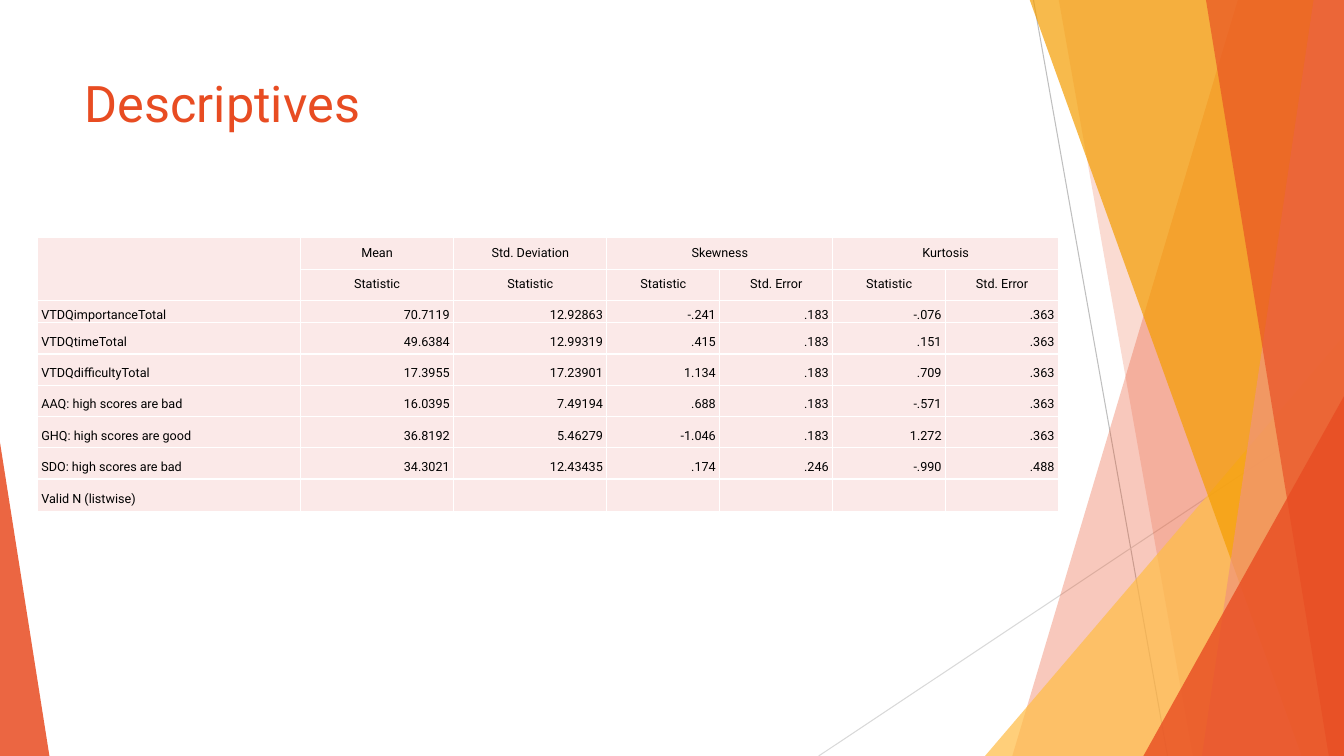
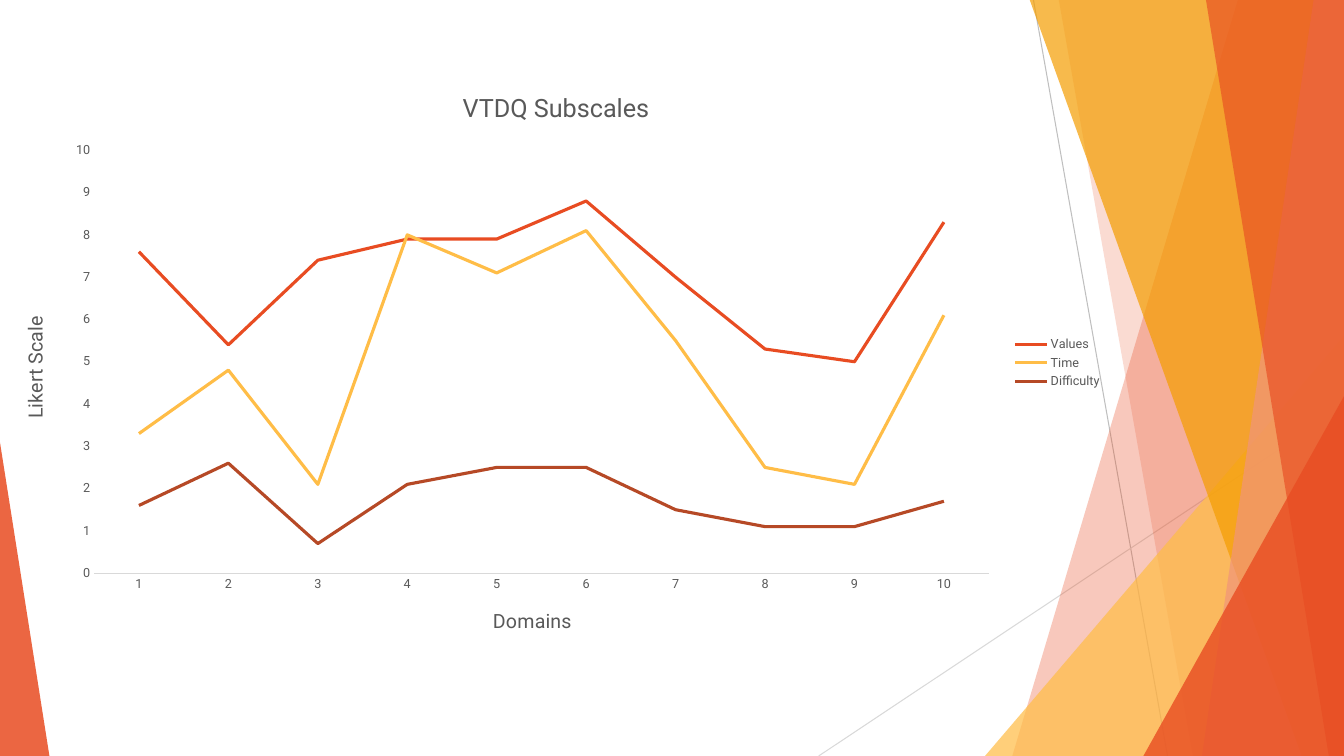
from dataclasses import dataclass

from pptx import Presentation
from pptx.chart.data import CategoryChartData
from pptx.dml.color import RGBColor
from pptx.enum.chart import XL_CHART_TYPE, XL_LEGEND_POSITION, XL_TICK_MARK
from pptx.enum.shapes import MSO_CONNECTOR, MSO_SHAPE
from pptx.enum.text import MSO_ANCHOR, MSO_AUTO_SIZE, PP_ALIGN
from pptx.oxml.ns import qn
from pptx.oxml.xmlchemy import OxmlElement
from pptx.util import Inches, Pt

LEFT, CENTER, RIGHT = PP_ALIGN.LEFT, PP_ALIGN.CENTER, PP_ALIGN.RIGHT
TOP, MIDDLE = MSO_ANCHOR.TOP, MSO_ANCHOR.MIDDLE
NO_AUTOFIT = MSO_AUTO_SIZE.NONE
STRAIGHT, TRIANGLE = MSO_CONNECTOR.STRAIGHT, MSO_SHAPE.ISOSCELES_TRIANGLE
LINE, LEGEND_RIGHT, NO_TICK = XL_CHART_TYPE.LINE, XL_LEGEND_POSITION.RIGHT, XL_TICK_MARK.NONE
TITLE_ONLY, BLANK = 5, 6


@dataclass(frozen=True)
class Theme:
    """Colours, font and type sizes of the deck."""
    font: str = "Roboto"
    red: str = "E84C22"
    amber: str = "FFBD47"
    orange: str = "F49D00"
    salmon: str = "F1947A"
    rust: str = "B64926"
    blush: str = "FBE9E8"
    white: str = "FFFFFF"
    black: str = "000000"
    grey: str = "595959"
    mid_line: str = "BFBFBF"
    light_line: str = "D9D9D9"
    title: int = 36
    chart_title: int = 18
    axis_title: int = 14
    base: int = 10
    small: int = 9
    leading: int = 16


T = Theme()
SLIDE_W, SLIDE_H = 13.33, 7.5
SLIDE_BOX = (0, 0, SLIDE_W, SLIDE_H)

RAYS = [((10.25, 0), (11.58, 7.5), T.mid_line), ((13.33, 4.03), (8.12, 7.5), T.light_line)]
FACETS = [
    ("band", 12.28, 10.04, T.red, 30),
    ("band", 10.5, 11.83, T.red, 20),
    ("triangle", (9.77, 3.33, 3.56), 1, T.amber, 72),
    ("band", 10.21, 12.91, T.orange, 70),
    ("band", 13.03, 11.92, T.salmon, 70),
    ("band", 11.96, 13.18, T.red, 65),
    ("triangle", (11.34, 3.93, 1.99), 1, T.red, 80),
    ("triangle", (0, 4.39, 0.49), 0, T.red, 85),
]

COL_WIDTHS = [2.61, 1.52, 1.52] + [1.12] * 4
ROW_HEIGHTS = [0.31, 0.31, 0.21] + [0.31] * 5 + [0.32]
HEADER_ROWS = 2
MERGES = [((0, 0), (1, 0)), ((0, 3), (0, 4)), ((0, 5), (0, 6))]
STATISTICS = [
    ["", "Mean", "Std. Deviation", "Skewness", "", "Kurtosis", ""],
    ["", "Statistic", "Statistic", "Statistic", "Std. Error", "Statistic", "Std. Error"],
    ["VTDQimportanceTotal", "70.7119", "12.92863", "-.241", ".183", "-.076", ".363"],
    ["VTDQtimeTotal", "49.6384", "12.99319", ".415", ".183", ".151", ".363"],
    ["VTDQdifficultyTotal", "17.3955", "17.23901", "1.134", ".183", ".709", ".363"],
    ["AAQ: high scores are bad", "16.0395", "7.49194", ".688", ".183", "-.571", ".363"],
    ["GHQ: high scores are good", "36.8192", "5.46279", "-1.046", ".183", "1.272", ".363"],
    ["SDO: high scores are bad", "34.3021", "12.43435", ".174", ".246", "-.990", ".488"],
    ["Valid N (listwise)", "", "", "", "", "", ""],
]

SERIES = [
    ("Values", T.red, [7.6, 5.4, 7.4, 7.9, 7.9, 8.8, 7, 5.3, 5, 8.3]),
    ("Time", T.amber, [3.3, 4.8, 2.1, 8, 7.1, 8.1, 5.5, 2.5, 2.1, 6.1]),
    ("Difficulty", T.rust, [1.6, 2.6, 0.7, 2.1, 2.5, 2.5, 1.5, 1.1, 1.1, 1.7]),
]


def rgb(color):
    """Return the RGBColor of a hex string."""
    return RGBColor.from_string(color)


def style_font(font, size, color):
    """Set the deck font with a size and colour."""
    font.name, font.size, font.bold = T.font, Pt(size), False
    font.color.rgb = rgb(color)


def write(tf, text, size=T.base, color=T.black, align=None, leading=None, indent=None):
    """Write one formatted paragraph into a text frame."""
    p = tf.paragraphs[0]
    if align is not None:
        p.alignment = align
    if leading:
        p.line_spacing = Pt(leading)
    if indent:
        for side in ("marL", "marR"):
            p._p.get_or_add_pPr().set(side, str(Inches(indent)))
    if text:
        r = p.add_run()
        r.text = text
        style_font(r.font, size, color)


def style_line(line, color, width=0.75):
    """Set the colour and width of a line."""
    line.color.rgb = rgb(color)
    line.width = Pt(width)


def add_ray(shapes, start, end, color):
    """Draw a thin line without a shadow."""
    c = shapes.add_connector(STRAIGHT, *(Inches(v) for v in (*start, *end)))
    style_line(c.line, color)
    c._element.spPr.append(OxmlElement("a:effectLst"))


def add_facet(shapes, box, kind, where, lean, color, opacity):
    """Draw a translucent band to the right edge, or a triangle on the bottom edge."""
    x, y, w, h = box
    right, bottom = Inches(x + w), Inches(y + h)
    if kind == "band":
        top = Inches(y - 0.01)
        builder = shapes.build_freeform(Inches(x + where), top)
        builder.add_line_segments([(right, top), (right, bottom), (Inches(x + lean), bottom)])
        sp = builder.convert_to_shape()
    else:
        left, top, width = where
        sp = shapes.add_shape(TRIANGLE, Inches(x + left), Inches(y + top),
                              Inches(width), Inches(h - top))
        sp.adjustments[0] = lean
    sp.shadow.inherit = False
    sp.line.fill.background()
    sp.fill.solid()
    sp.fill.fore_color.rgb = rgb(color)
    alpha = OxmlElement("a:alpha")
    alpha.set("val", str(opacity * 1000))
    sp._element.spPr.find(qn("a:solidFill"))[0].append(alpha)


def add_backdrop(prs, s, box):
    """Draw the facets as a group and place it on the master behind everything."""
    group = s.shapes.add_group_shape()
    for ray in RAYS:
        add_ray(group.shapes, *ray)
    for facet in FACETS:
        add_facet(group.shapes, box, *facet)
    for number, props in enumerate(group._element.iter(qn("p:cNvPr")), 100):
        props.set("id", str(number))
    prs.slide_master.shapes._spTree.insert(2, group._element)


def add_title(s, text, box):
    """Place and format the slide title."""
    title = s.shapes.title
    title.left, title.top, title.width, title.height = (Inches(v) for v in box)
    tf = title.text_frame
    tf.word_wrap, tf.auto_size, tf.vertical_anchor = True, NO_AUTOFIT, TOP
    write(tf, text, size=T.title, color=T.red, align=LEFT)


def style_cell(cell):
    """Give a cell its borders, fill and zero margins."""
    tcPr = cell._tc.get_or_add_tcPr()
    for side in ("a:lnL", "a:lnR", "a:lnT", "a:lnB"):
        ln, fill, color = (OxmlElement(tag) for tag in (side, "a:solidFill", "a:srgbClr"))
        ln.set("w", str(Pt(1)))
        color.set("val", T.white)
        fill.append(color)
        ln.append(fill)
        tcPr.append(ln)
    cell.fill.solid()
    cell.fill.fore_color.rgb = rgb(T.blush)
    cell.margin_left = cell.margin_right = cell.margin_top = cell.margin_bottom = 0


def add_statistics(s, box):
    """Build the table of descriptive statistics."""
    tbl = s.shapes.add_table(len(STATISTICS), len(COL_WIDTHS), *(Inches(v) for v in box)).table
    tbl.first_row = tbl.horz_banding = False
    for col, width in zip(tbl.columns, COL_WIDTHS):
        col.width = Inches(width)
    for row, height in zip(tbl.rows, ROW_HEIGHTS):
        row.height = Inches(height)
    for i, texts in enumerate(STATISTICS):
        header = i < HEADER_ROWS
        for j, text in enumerate(texts):
            cell = tbl.cell(i, j)
            style_cell(cell)
            cell.vertical_anchor = TOP if header else MIDDLE
            align = CENTER if header else RIGHT if j else LEFT
            write(cell.text_frame, text, size=T.small, align=align,
                  leading=T.leading, indent=0.04)
    for first, last in MERGES:
        tbl.cell(*first).merge(tbl.cell(*last))


def style_axis(axis, title):
    """Format an axis and its title."""
    axis.has_major_gridlines = False
    axis.major_tick_mark = axis.minor_tick_mark = NO_TICK
    style_font(axis.tick_labels.font, T.small, T.grey)
    write(axis.axis_title.text_frame, title, size=T.axis_title, color=T.grey)


def add_subscales(s, box):
    """Build the line chart of the subscales."""
    data = CategoryChartData()
    data.categories = [str(n) for n in range(1, 11)]
    for name, _, values in SERIES:
        data.add_series(name, values)
    chart = s.shapes.add_chart(LINE, *(Inches(v) for v in box), data).chart
    style_font(chart.font, T.base, T.black)
    write(chart.chart_title.text_frame, "VTDQ Subscales", size=T.chart_title, color=T.grey)
    chart.chart_title.include_in_layout = False

    domains, likert = chart.category_axis, chart.value_axis
    style_axis(domains, "Domains")
    style_line(domains.format.line, T.light_line)
    style_axis(likert, "Likert Scale")
    likert.format.line.fill.background()
    likert.minimum_scale, likert.maximum_scale, likert.major_unit = 0, 10, 1
    body = likert.axis_title.text_frame._txBody.find(qn("a:bodyPr"))
    body.set("rot", "-5400000")
    body.set("vert", "horz")

    chart.has_legend = True
    chart.legend.position = LEGEND_RIGHT
    chart.legend.include_in_layout = False
    style_font(chart.legend.font, T.small, T.grey)

    plot = chart.plots[0]
    plot.vary_by_categories = False
    for series, (_, color, _) in zip(plot.series, SERIES):
        series.smooth = False
        style_line(series.format.line, color, 2.25)


def main():
    """Build and save the deck."""
    prs = Presentation()
    prs.slide_width, prs.slide_height = Inches(SLIDE_W), Inches(SLIDE_H)

    s = prs.slides.add_slide(prs.slide_layouts[TITLE_ONLY])
    add_backdrop(prs, s, SLIDE_BOX)
    add_title(s, "Descriptives", (0.74, 0.67, 9.4, 1.44))
    add_statistics(s, (0.37, 2.36, sum(COL_WIDTHS), sum(ROW_HEIGHTS)))

    s = prs.slides.add_slide(prs.slide_layouts[BLANK])
    add_subscales(s, (0, 0.69, 11.03, 5.82))
    prs.save("out.pptx")


if __name__ == "__main__":
    main()
